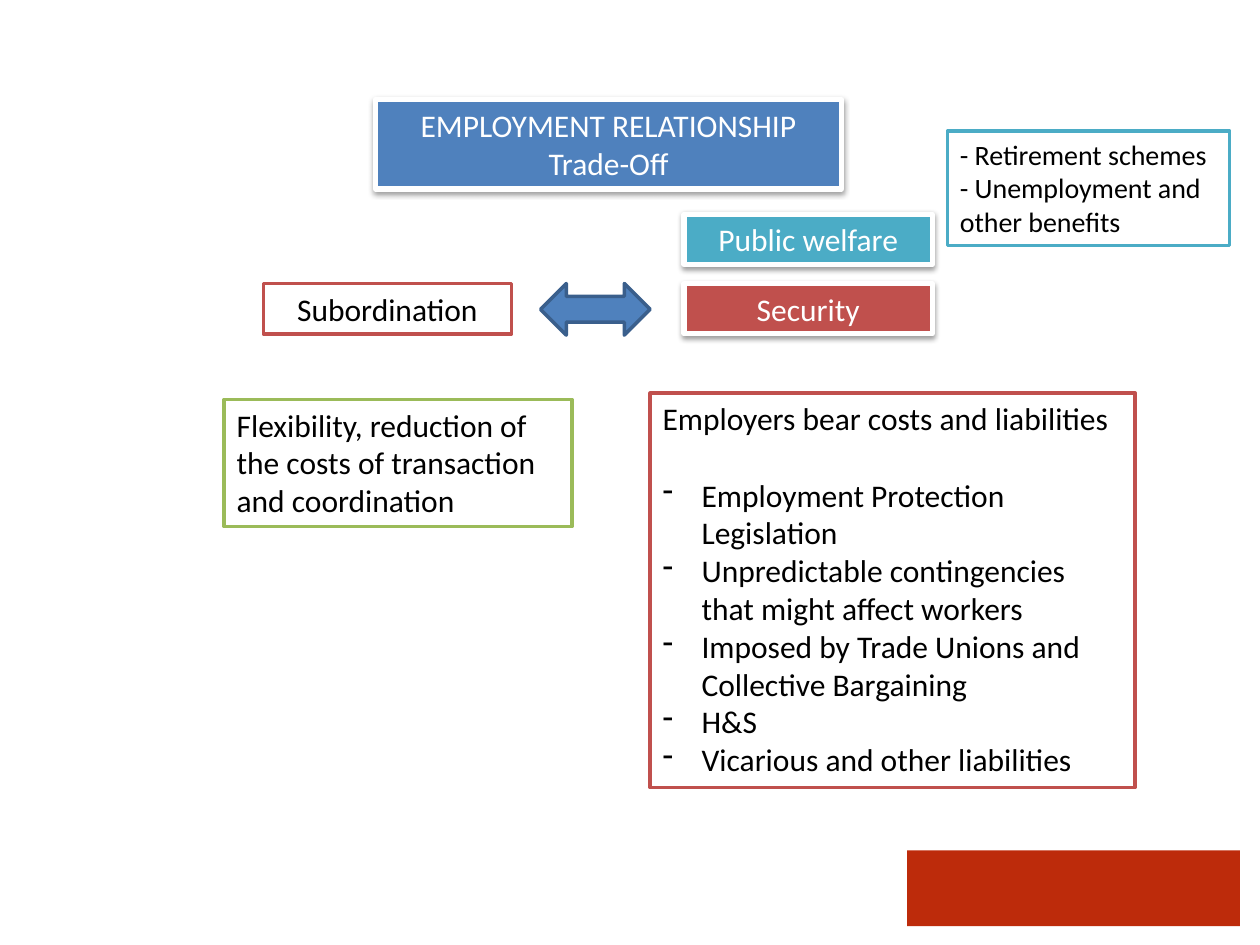
from dataclasses import dataclass
from typing import Any

from lxml.etree import SubElement
from pptx import Presentation
from pptx.dml.color import RGBColor
from pptx.enum.shapes import MSO_SHAPE as Shape
from pptx.enum.text import MSO_ANCHOR as Anchor, MSO_AUTO_SIZE as AutoSize, PP_ALIGN as Align
from pptx.oxml.ns import qn
from pptx.util import Inches, Pt

COLORS = {
    "white": "FFFFFF", "black": "000000", "blue": "4F81BD", "navy": "3A5F8C",
    "red": "C0504D", "green": "9BBB59", "teal": "4BACC6", "brick": "BD2B0B",
}


def rgb(name):
    return RGBColor.from_string(COLORS[name])


def write_text(paragraph, text, *, font="Calibri", size=18, color="black",
               align=Align.LEFT, bullet=None, space_before=0):
    """Fill one paragraph with formatted text, with a hanging bullet if given."""
    if bullet:
        properties = paragraph._p.get_or_add_pPr()
        properties.set("marL", str(Inches(0.31)))
        properties.set("indent", str(-Inches(0.31)))
        SubElement(properties, qn("a:buFontTx"))
        SubElement(properties, qn("a:buChar"), char=bullet)
    paragraph.alignment = align
    paragraph.space_before = Pt(space_before)
    run = paragraph.add_run()
    run.text = text
    run.font.name = font
    run.font.size = Pt(size)
    run.font.color.rgb = rgb(color)


@dataclass
class SlideBuilder:
    slide: Any
    outline_width: float = 2
    card_line_width: float = 3

    def block(self, kind, bounds, fill, line=None, line_width=None):
        """Plain preset shape without text."""
        shape = self.slide.shapes.add_shape(kind, *map(Inches, bounds))
        shape.shadow.inherit = False
        shape.fill.solid()
        shape.fill.fore_color.rgb = rgb(fill)
        if line:
            shape.line.color.rgb = rgb(line)
            shape.line.width = Pt(line_width or self.outline_width)
        else:
            shape.line.fill.background()
        return shape

    def text_frame(self, shape):
        frame = shape.text_frame
        frame.word_wrap = True
        frame.auto_size = AutoSize.SHAPE_TO_FIT_TEXT
        frame.vertical_anchor = Anchor.TOP
        return frame

    def paragraphs(self, shape, lines, **text_format):
        frame = self.text_frame(shape)
        for index, line in enumerate(lines):
            paragraph = frame.add_paragraph() if index else frame.paragraphs[0]
            write_text(paragraph, line, **text_format)
        return frame

    def card(self, bounds, fill, *lines):
        """Filled box with a white border, a soft shadow and centred text."""
        shape = self.block(Shape.RECTANGLE, bounds, fill, "white", self.card_line_width)
        effects = shape._element.spPr.find(qn("a:effectLst"))
        shadow = SubElement(effects, qn("a:outerShdw"), blurRad=str(Pt(3.1)),
                            dist=str(Pt(1.6)), dir="5400000", rotWithShape="0")
        color = SubElement(shadow, qn("a:srgbClr"), val=COLORS["black"])
        SubElement(color, qn("a:alpha"), val="38000")
        self.paragraphs(shape, lines, color="white", align=Align.CENTER)

    def outlined(self, bounds, line, *lines, **text_format):
        """White box with a coloured border and dark text."""
        shape = self.block(Shape.RECTANGLE, bounds, "white", line)
        return self.paragraphs(shape, lines, **text_format)

    def bullets(self, frame, items, gap):
        """Dashed list below the existing text, set off by a gap in points."""
        for index, item in enumerate(items):
            write_text(frame.add_paragraph(), item, bullet="-",
                       space_before=0 if index else gap)


def main():
    presentation = Presentation()
    presentation.slide_width, presentation.slide_height = Inches(10), Inches(7.5)
    builder = SlideBuilder(presentation.slides.add_slide(presentation.slide_layouts[6]))

    # Footer block
    builder.block(Shape.RECTANGLE, (7.2, 6.75, 2.64, 0.6), "brick")

    # Heading
    builder.card((2.98, 0.79, 3.7, 0.71), "blue", "EMPLOYMENT RELATIONSHIP", "Trade-Off")

    # Trade-off row: subordination against security
    row_top, label_width, label_height, security_left = 2.25, 1.97, 0.4, 5.43
    builder.outlined((2.09, row_top, label_width, label_height), "red",
                     "Subordination", align=Align.CENTER)
    builder.card((security_left, row_top, label_width, label_height), "red", "Security")
    builder.block(Shape.LEFT_RIGHT_ARROW, (4.29, row_top, 0.87, 0.41), "blue", "navy")

    # What each side brings
    builder.outlined((1.78, 3.17, 2.76, 1.01), "green",
                     "Flexibility, reduction of the costs of transaction and coordination")
    costs = builder.outlined((5.16, 3.12, 3.85, 3.13), "red",
                             "Employers bear costs and liabilities")
    builder.bullets(costs, [
        "Employment Protection Legislation",
        "Unpredictable contingencies that might affect workers",
        "Imposed by Trade Unions and Collective Bargaining",
        "H&S",
        "Vicarious and other liabilities",
    ], gap=22)

    # Public welfare and its benefits
    builder.card((security_left, 1.7, label_width, label_height), "teal", "Public welfare")
    builder.outlined((7.52, 1.04, 2.24, 0.91), "teal", "- Retirement schemes",
                     "- Unemployment and other benefits", size=16)

    presentation.save("out.pptx")


if __name__ == "__main__":
    main()
